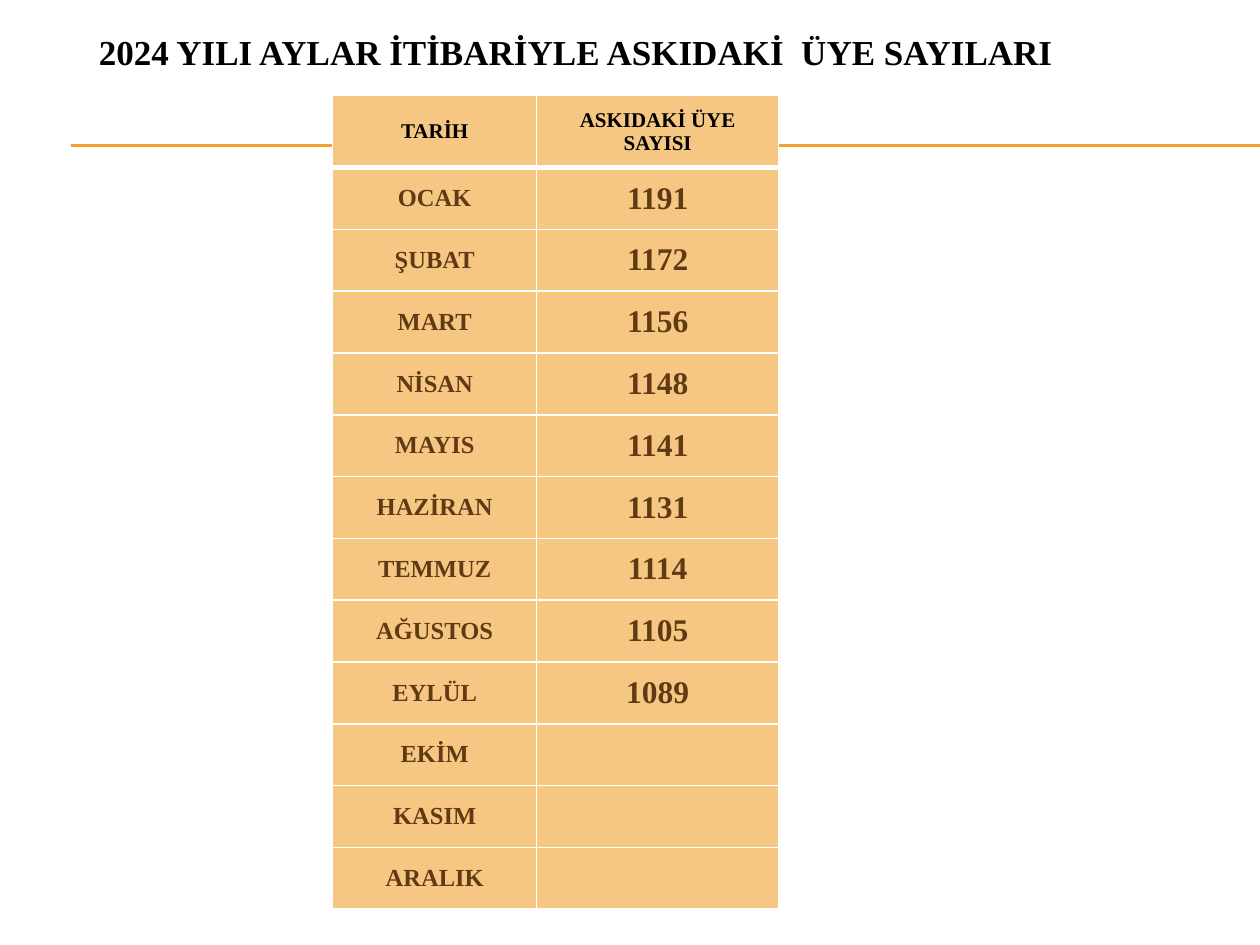
from dataclasses import dataclass

from lxml import etree
from pptx import Presentation
from pptx.dml.color import RGBColor
from pptx.enum.shapes import MSO_CONNECTOR
from pptx.enum.text import MSO_ANCHOR, PP_ALIGN
from pptx.oxml.ns import qn
from pptx.util import Inches, Pt

STRAIGHT = MSO_CONNECTOR.STRAIGHT
MIDDLE = MSO_ANCHOR.MIDDLE
CENTER = PP_ALIGN.CENTER

COLS, ROWS = 100, 75

HEADER = ("TARİH", "ASKIDAKİ ÜYE SAYISI")
MONTHS = (
    ("OCAK", "1191"),
    ("ŞUBAT", "1172"),
    ("MART", "1156"),
    ("NİSAN", "1148"),
    ("MAYIS", "1141"),
    ("HAZİRAN", "1131"),
    ("TEMMUZ", "1114"),
    ("AĞUSTOS", "1105"),
    ("EYLÜL", "1089"),
    ("EKİM", ""),
    ("KASIM", ""),
    ("ARALIK", ""),
)


@dataclass(frozen=True)
class Theme:
    font: str = "Times New Roman"
    black: str = "000000"
    brown: str = "603A14"
    sand: str = "F6C782"
    amber: str = "F0A22E"
    white: str = "FFFFFF"
    title: int = 20
    header: int = 12
    month: int = 14
    count: int = 18
    rule: float = 0.75
    border: int = 1
    header_border: int = 3


class Deck:
    def __init__(self, theme):
        self.theme = theme
        self.prs = Presentation()
        self.prs.slide_width = Inches(10)
        self.prs.slide_height = Inches(7.5)
        self.s = self.prs.slides.add_slide(self.prs.slide_layouts[6])

    def x(self, cols):
        return round(self.prs.slide_width * cols / COLS)

    def y(self, rows):
        return round(self.prs.slide_height * rows / ROWS)

    def set_text(self, tf, text, size, color):
        tf.text = text
        p = tf.paragraphs[0]
        p.alignment = CENTER
        for r in p.runs:
            r.font.name = self.theme.font
            r.font.size = Pt(size)
            r.font.bold = True
            r.font.color.rgb = RGBColor.from_string(color)

    def rule(self, left, right, top):
        line = self.s.shapes.add_connector(
            STRAIGHT, self.x(left), self.y(top), self.x(right), self.y(top))
        line.line.color.rgb = RGBColor.from_string(self.theme.amber)
        line.line.width = Pt(self.theme.rule)
        etree.SubElement(line._element.spPr, qn("a:effectLst"))

    def title(self, text, left, top, width, height):
        box = self.s.shapes.add_textbox(
            self.x(left), self.y(top), self.x(width), self.y(height))
        tf = box.text_frame
        tf.word_wrap = True
        tf.vertical_anchor = MIDDLE
        self.set_text(tf, text, self.theme.title, self.theme.black)

    def border(self, cell, side, width):
        tcPr = cell._tc.get_or_add_tcPr()
        ln = etree.SubElement(tcPr, qn(f"a:ln{side}"), w=str(Pt(width)))
        fill = etree.SubElement(ln, qn("a:solidFill"))
        etree.SubElement(fill, qn("a:srgbClr"), val=self.theme.white)

    def cell(self, cell, text, size, color, borders):
        for side, width in borders.items():
            self.border(cell, side, width)
        cell.fill.solid()
        cell.fill.fore_color.rgb = RGBColor.from_string(self.theme.sand)
        cell.vertical_anchor = MIDDLE
        self.set_text(cell.text_frame, text, size, color)

    def table(self, header, body, left, top, widths, header_height, height):
        t = self.theme
        table = self.s.shapes.add_table(
            len(body) + 1, len(header), self.x(left), self.y(top),
            self.x(sum(widths)), self.y(height)).table
        for column, width in zip(table.columns, widths):
            column.width = self.x(width)
        body_height = (height - header_height) / len(body)
        for i, row in enumerate(table.rows):
            row.height = self.y(body_height if i else header_height)
        thin, thick = t.border, t.header_border
        head_borders = {"L": thin, "R": thin, "T": thin, "B": thick}
        body_borders = {"L": thin, "R": thin, "B": thin}
        for j, text in enumerate(header):
            self.cell(table.cell(0, j), text, t.header, t.black, head_borders)
        for i, values in enumerate(body, 1):
            for j, (text, size) in enumerate(zip(values, (t.month, t.count))):
                self.cell(table.cell(i, j), text, size, t.brown, body_borders)


def main():
    deck = Deck(Theme())
    for top in (11.5, 11.6):
        deck.rule(5.6, COLS, top)
    deck.table(HEADER, MONTHS, left=26.4, top=7.6, widths=(16.2, 19.2),
               header_height=5.7, height=64.6)
    deck.title("2024 YILI AYLAR İTİBARİYLE ASKIDAKİ  ÜYE SAYILARI",
               left=2.8, top=0.5, width=85.8, height=7.1)
    deck.prs.save("out.pptx")


if __name__ == "__main__":
    main()
